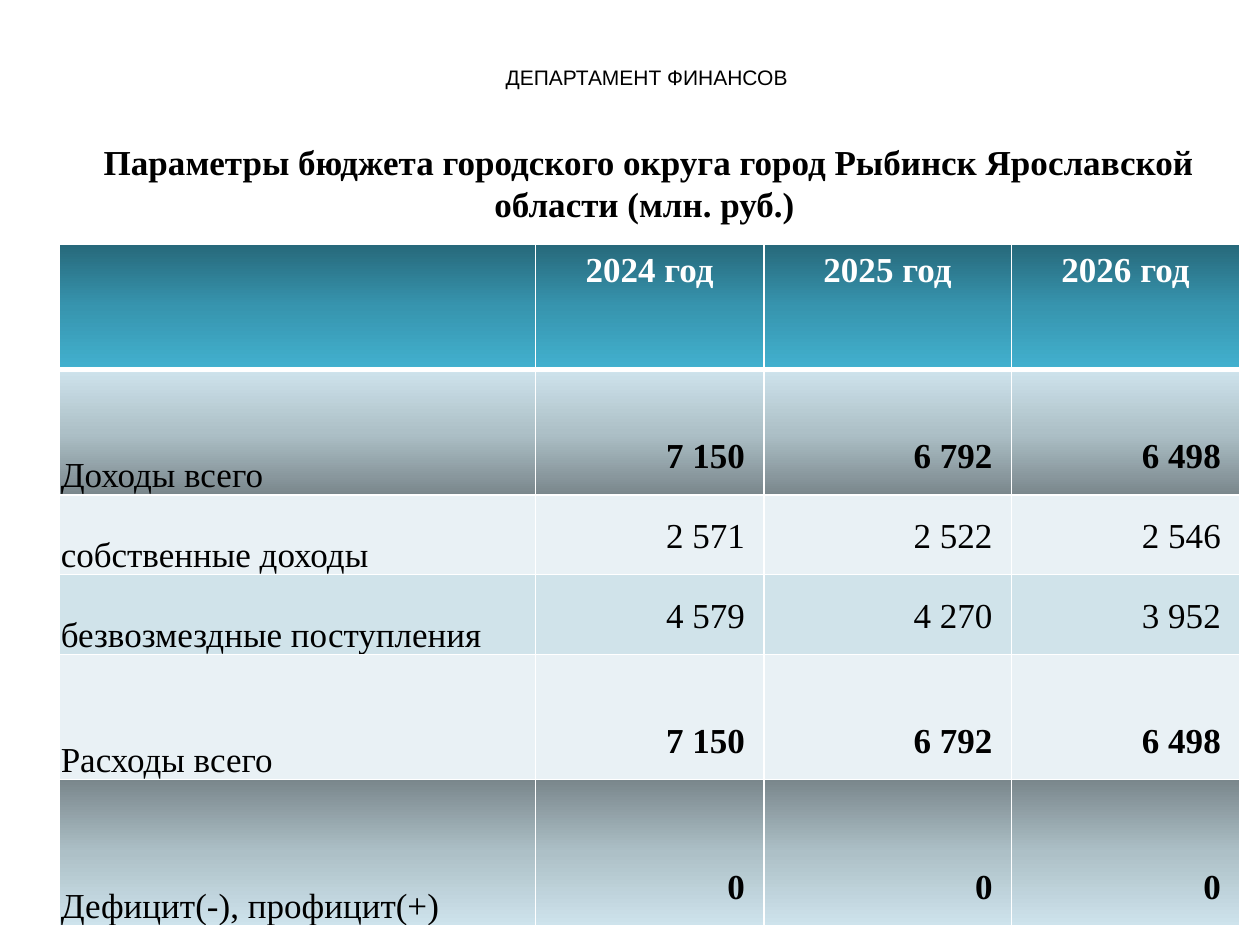
from dataclasses import dataclass

from lxml import etree
from pptx import Presentation
from pptx.dml.color import RGBColor
from pptx.enum.text import MSO_ANCHOR, MSO_AUTO_SIZE, PP_ALIGN
from pptx.oxml.ns import qn
from pptx.util import Pt

LEFT, CENTER, RIGHT = PP_ALIGN.LEFT, PP_ALIGN.CENTER, PP_ALIGN.RIGHT
TOP, BOTTOM = MSO_ANCHOR.TOP, MSO_ANCHOR.BOTTOM
GROW = MSO_AUTO_SIZE.SHAPE_TO_FIT_TEXT

COLORS = {
    "black": "000000", "white": "FFFFFF",
    "pale": "E9F1F5", "light": "D0E3EA",
    "teal_dark": "27697B", "teal": "3795AF", "teal_bright": "42B1CF",
    "gray_dark": "7A878C", "gray": "ADC0C7", "gray_light": "CEE3EC",
}
TEAL_STOPS = ("teal_dark", "teal", "teal_bright")
GRAY_STOPS = ("gray_dark", "gray", "gray_light")
DOWN, UP = 90, 270
COLUMN_WIDTHS = (272, 130.5, 141.5, 130.5)
HEADER_HEIGHT = 71.5
THIN, THICK = 1, 3


@dataclass(frozen=True)
class Fill:
    stops: tuple[str, ...]
    angle: int = DOWN


@dataclass(frozen=True)
class BudgetRow:
    label: str
    values: tuple[str, ...]
    height: float
    fill: Fill
    bold: bool = False


HEADER = ("", "2024 год", "2025 год", "2026 год")
HEADER_FILL = Fill(TEAL_STOPS)
BUDGET = (
    BudgetRow("Доходы всего", ("7 150", "6 792", "6 498"), 71.5, Fill(GRAY_STOPS, UP), True),
    BudgetRow("собственные доходы", ("2 571", "2 522", "2 546"), 35.3, Fill(("pale",))),
    BudgetRow("безвозмездные поступления", ("4 579", "4 270", "3 952"), 39.6, Fill(("light",))),
    BudgetRow("Расходы всего", ("7 150", "6 792", "6 498"), 71.5, Fill(("pale",)), True),
    BudgetRow("Дефицит(-), профицит(+)", ("0", "0", "0"), 83.5, Fill(GRAY_STOPS), True),
)


def write_text(frame, text: str, *, size: float = 20, font: str = "Times New Roman",
               color: str = "black", bold: bool = False, align=LEFT) -> None:
    paragraph = frame.paragraphs[0]
    paragraph.alignment = align
    if text:
        paragraph.add_run().text = text
    for style in (paragraph.font, *(run.font for run in paragraph.runs)):
        style.size, style.name, style.bold = Pt(size), font, bold
        style.color.rgb = RGBColor.from_string(COLORS[color])


def add_heading(slide, text: str, left: float, top: float, width: float,
                height: float, **text_format) -> None:
    box = slide.shapes.add_textbox(Pt(left), Pt(top), Pt(width), Pt(height))
    box.text_frame.word_wrap = True
    box.text_frame.auto_size = GROW
    write_text(box.text_frame, text, align=CENTER, **text_format)


def add_color(parent, color: str) -> None:
    etree.SubElement(parent, qn("a:srgbClr"), val=COLORS[color])


def set_borders(cell, top: float, bottom: float) -> None:
    properties = cell._tc.get_or_add_tcPr()
    for side, width in (("L", THIN), ("R", THIN), ("T", top), ("B", bottom)):
        line = etree.SubElement(properties, qn(f"a:ln{side}"), w=str(Pt(width)))
        add_color(etree.SubElement(line, qn("a:solidFill")), "white")


def set_fill(cell, fill: Fill) -> None:
    if len(fill.stops) == 1:
        cell.fill.solid()
        cell.fill.fore_color.rgb = RGBColor.from_string(COLORS[fill.stops[0]])
        return
    gradient = etree.SubElement(cell._tc.get_or_add_tcPr(), qn("a:gradFill"), rotWithShape="1")
    stop_list = etree.SubElement(gradient, qn("a:gsLst"))
    step = 100000 // (len(fill.stops) - 1)
    for index, color in enumerate(fill.stops):
        add_color(etree.SubElement(stop_list, qn("a:gs"), pos=str(index * step)), color)
    etree.SubElement(gradient, qn("a:lin"), ang=str(fill.angle * 60000), scaled="0")


def format_cell(cell, fill: Fill, *, anchor=BOTTOM, margins: tuple[float, ...] = (),
                top: float = THIN, bottom: float = THIN) -> None:
    cell.vertical_anchor = anchor
    if margins:
        (cell.margin_left, cell.margin_top,
         cell.margin_right, cell.margin_bottom) = map(Pt, margins)
    set_borders(cell, top, bottom)
    set_fill(cell, fill)


def add_budget_table(slide, left: float, top: float) -> None:
    heights = (HEADER_HEIGHT, *(row.height for row in BUDGET))
    table = slide.shapes.add_table(len(heights), len(COLUMN_WIDTHS), Pt(left), Pt(top),
                                   Pt(sum(COLUMN_WIDTHS)), Pt(sum(heights))).table
    for column, width in zip(table.columns, COLUMN_WIDTHS):
        column.width = Pt(width)
    for table_row, height in zip(table.rows, heights):
        table_row.height = Pt(height)

    # Years
    for column, year in enumerate(HEADER):
        cell = table.cell(0, column)
        write_text(cell.text_frame, year, color="white", bold=True, align=CENTER)
        format_cell(cell, HEADER_FILL, anchor=TOP, bottom=THICK)

    # Budget lines: label, then one amount per year
    for index, row in enumerate(BUDGET, start=1):
        upper = THICK if index == 1 else THIN
        label = table.cell(index, 0)
        write_text(label.text_frame, row.label)
        format_cell(label, row.fill, margins=(0.75, 0.75, 0.75, 0), top=upper)
        for column, value in enumerate(row.values, start=1):
            amount = table.cell(index, column)
            write_text(amount.text_frame, value, bold=row.bold, align=RIGHT)
            format_cell(amount, row.fill, margins=(10.8,) * 4, top=upper)


def main() -> None:
    presentation = Presentation()
    presentation.slide_width, presentation.slide_height = Pt(720), Pt(540)
    slide = presentation.slides.add_slide(presentation.slide_layouts[6])

    # Headings
    add_heading(slide, "ДЕПАРТАМЕНТ ФИНАНСОВ ", 257.8, 33.4, 226.8, 21.8, size=12, font="Arial")
    add_heading(slide, "Параметры бюджета городского округа город Рыбинск "
                       "Ярославской области (млн. руб.) ", 50.4, 77, 640.8, 55.7, bold=True)

    # Budget figures
    add_budget_table(slide, 34, 139.8)
    presentation.save("out.pptx")


if __name__ == "__main__":
    main()
